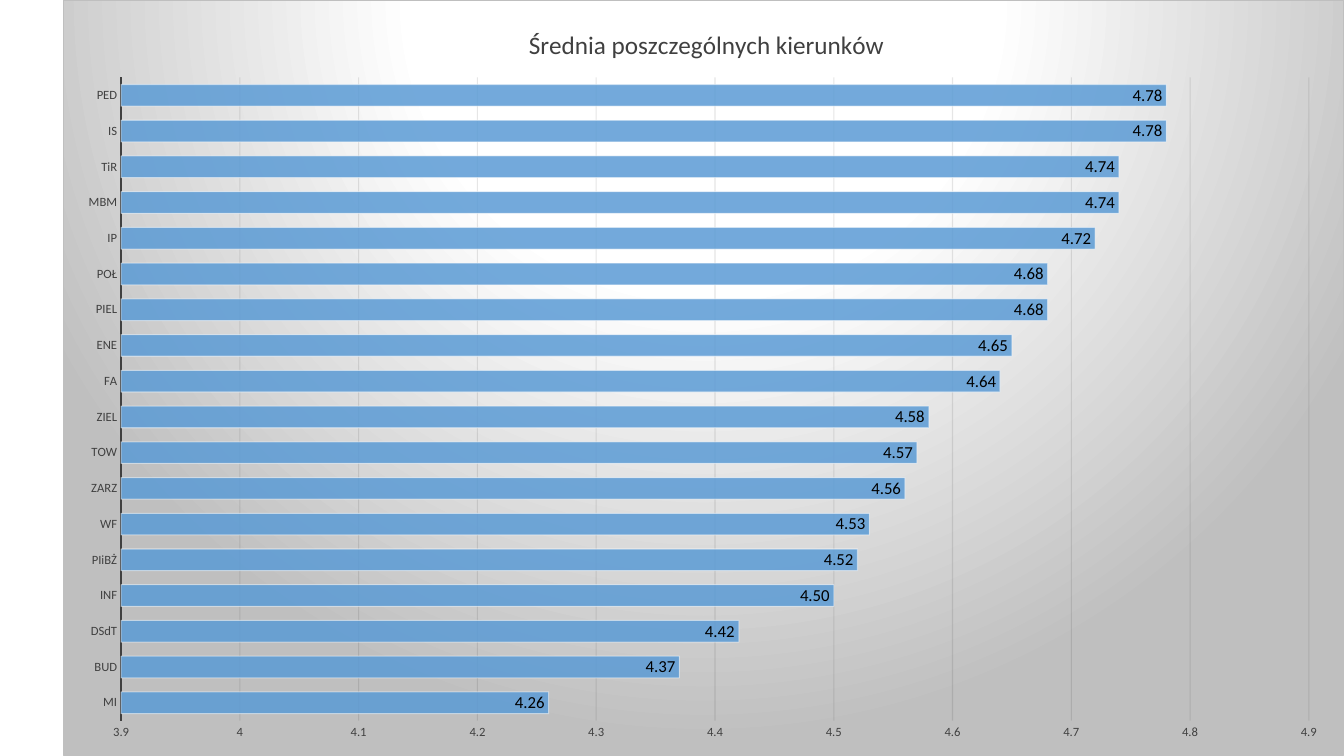
from lxml.etree import SubElement
from pptx import Presentation
from pptx.chart.data import CategoryChartData as ChartData
from pptx.dml.color import RGBColor
from pptx.enum.chart import XL_CHART_TYPE as ChartType
from pptx.enum.chart import XL_LABEL_POSITION as LabelPosition
from pptx.enum.chart import XL_TICK_MARK as TickMark
from pptx.oxml import parse_xml
from pptx.oxml.ns import nsdecls, qn
from pptx.util import Pt

BLACK = RGBColor(0x00, 0x00, 0x00)
DARK_GREY = RGBColor(0x40, 0x40, 0x40)
GRID_COLOR = RGBColor(0x0D, 0x0D, 0x0D)
SILVER = RGBColor(0xBF, 0xBF, 0xBF)
WHITE = RGBColor(0xFF, 0xFF, 0xFF)
BLUE = RGBColor(0x5B, 0x9B, 0xD5)
FONT_NAME = "Calibri"

TITLE = "Średnia poszczególnych kierunków"
AVERAGES = {
    "MI": 4.26, "BUD": 4.37, "DSdT": 4.42, "INF": 4.5, "PIiBŻ": 4.52,
    "WF": 4.53, "ZARZ": 4.56, "TOW": 4.57, "ZIEL": 4.58, "FA": 4.64,
    "ENE": 4.65, "PIEL": 4.68, "POŁ": 4.68, "IP": 4.72, "MBM": 4.74,
    "TiR": 4.74, "IS": 4.78, "PED": 4.78,
}


def set_attributes(target, values):
    for name, value in values.items():
        setattr(target, name, value)


def set_font(font, size, color):
    set_attributes(font, {"name": FONT_NAME, "size": Pt(size), "bold": False})
    font.color.rgb = color


def set_line(line, color, width):
    line.color.rgb = color
    line.width = Pt(width)


def set_alpha(chart, fill_location, percent):
    for color in chart.element.xpath(f".//{fill_location}/a:solidFill/a:srgbClr"):
        SubElement(color, qn("a:alpha")).set("val", str(percent * 1000))


def set_layout(parent, index, values):
    for old_layout in parent.findall(qn("c:layout")):
        parent.remove(old_layout)
    layout = parse_xml(f"<c:layout {nsdecls('c')}><c:manualLayout/></c:layout>")
    for name, value in values.items():
        SubElement(layout[0], qn(f"c:{name}")).set("val", str(value))
    parent.insert(index, layout)


def set_background(chart):
    stops = "".join(
        f'<a:gs pos="{position * 1000}"><a:srgbClr val="{color}"/></a:gs>'
        for position, color in [(0, WHITE), (39, WHITE), (100, SILVER)]
    )
    chart.element.find(qn("c:chart")).addnext(parse_xml(
        f'<c:spPr {nsdecls("c", "a")}><a:gradFill><a:gsLst>{stops}</a:gsLst>'
        '<a:path path="circle">'
        '<a:fillToRect l="50000" t="-80000" r="50000" b="180000"/></a:path></a:gradFill>'
        f'<a:ln w="{Pt(0.75)}"><a:solidFill><a:srgbClr val="{SILVER}"/></a:solidFill></a:ln>'
        "</c:spPr>"
    ))


def style_title(chart):
    paragraph = chart.chart_title.text_frame.paragraphs[0]
    run = paragraph.add_run()
    run.text = TITLE
    set_font(run.font, 18, DARK_GREY)
    set_layout(chart.element.xpath("c:chart/c:title")[0], 1, {
        "xMode": "edge", "yMode": "edge", "x": 0.36, "y": 0.03,
    })


def style_axes(chart):
    category_axis, value_axis = chart.category_axis, chart.value_axis
    for axis in (category_axis, value_axis):
        set_attributes(axis, {
            "major_tick_mark": TickMark.NONE, "minor_tick_mark": TickMark.NONE,
        })
        set_font(axis.tick_labels.font, 9, DARK_GREY)
    set_line(category_axis.format.line, DARK_GREY, 1.5)
    set_attributes(value_axis, {
        "minimum_scale": 3.9, "maximum_scale": 4.9, "major_unit": 0.1,
        "has_major_gridlines": True,
    })
    set_attributes(value_axis.tick_labels, {
        "number_format": "General", "number_format_is_linked": False,
    })
    value_axis.format.line.fill.background()
    set_line(value_axis.major_gridlines.format.line, GRID_COLOR, 0.75)
    set_alpha(chart, "c:majorGridlines/c:spPr/a:ln", 10)


def style_bars(chart):
    plot = chart.plots[0]
    set_attributes(plot, {"gap_width": 65, "vary_by_categories": False})
    series = plot.series[0]
    series.format.fill.solid()
    series.format.fill.fore_color.rgb = BLUE
    set_line(series.format.line, WHITE, 0.75)
    set_alpha(chart, "c:ser/c:spPr", 85)
    set_alpha(chart, "c:ser/c:spPr/a:ln", 50)
    labels = series.data_labels
    set_attributes(labels, {
        "show_value": True, "position": LabelPosition.INSIDE_END,
        "number_format": "0.00", "number_format_is_linked": False,
    })
    set_font(labels.font, 12, BLACK)


def add_averages_chart(slide, left, top, width, height):
    data = ChartData(number_format="0.00")
    data.categories = list(AVERAGES)
    data.add_series("Series 1", list(AVERAGES.values()))
    chart = slide.shapes.add_chart(
        ChartType.BAR_CLUSTERED, left, top, width, height, data
    ).chart
    chart.has_legend = False
    set_font(chart.font, 10, BLACK)
    set_background(chart)
    style_title(chart)
    style_axes(chart)
    style_bars(chart)
    set_layout(chart.element.xpath("c:chart/c:plotArea")[0], 0, {
        "layoutTarget": "inner", "xMode": "edge", "yMode": "edge",
        "x": 0.045, "y": 0.102, "w": 0.928, "h": 0.852,
    })


def main():
    presentation = Presentation()
    set_attributes(presentation, {"slide_width": Pt(960), "slide_height": Pt(540)})
    slide = presentation.slides.add_slide(presentation.slide_layouts[6])
    chart_left = Pt(45)
    add_averages_chart(
        slide, chart_left, 0,
        presentation.slide_width - chart_left, presentation.slide_height,
    )
    presentation.save("out.pptx")


if __name__ == "__main__":
    main()
